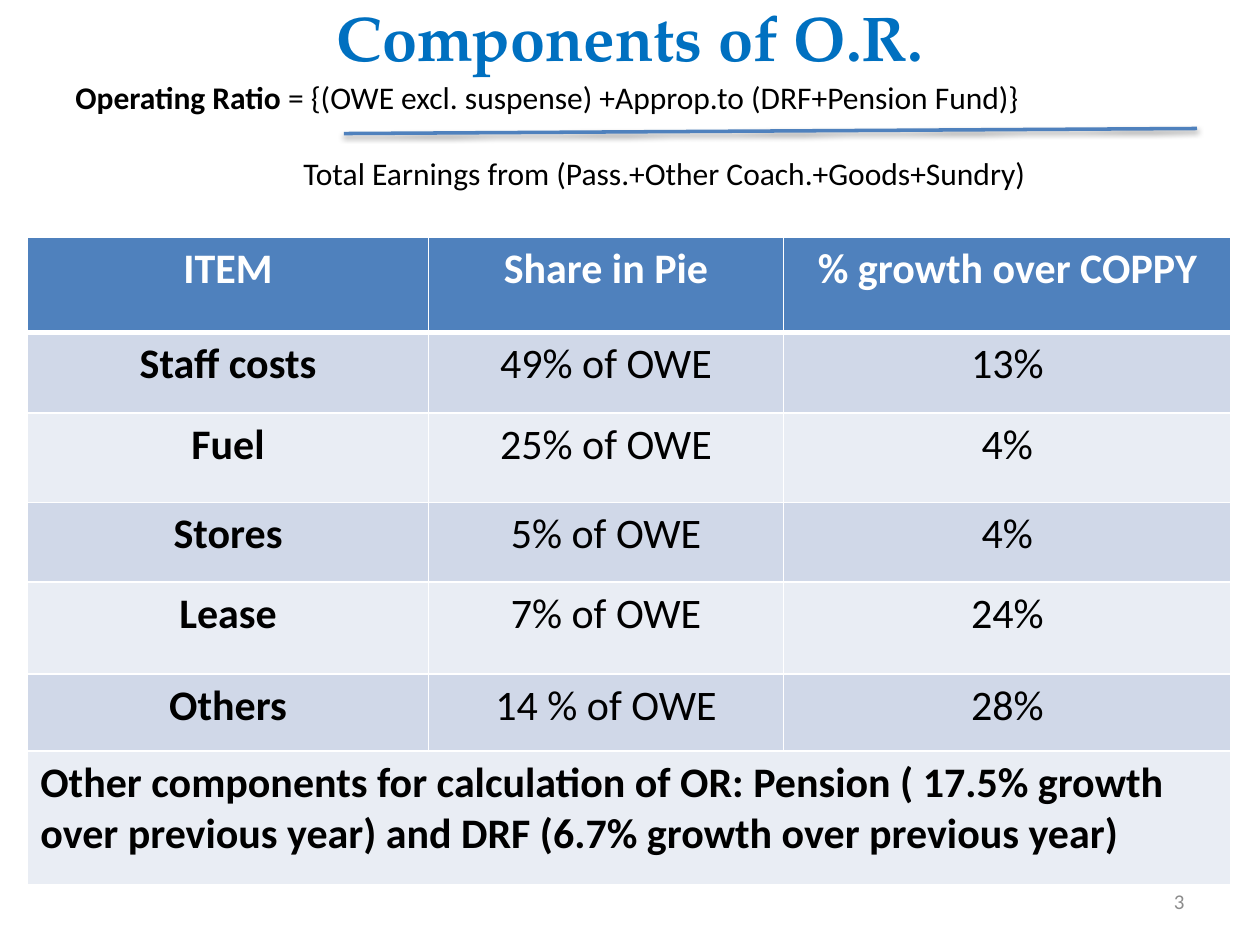
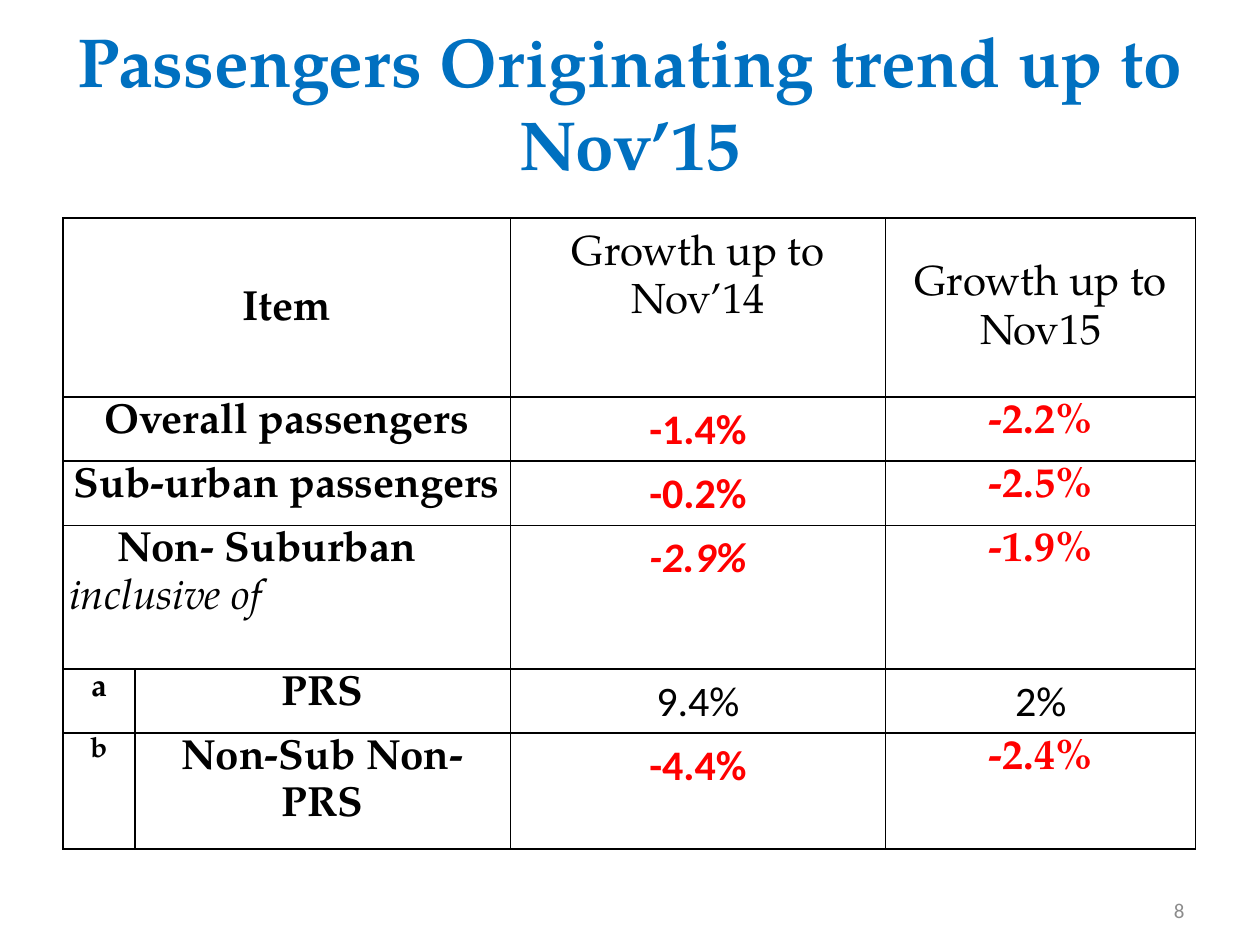
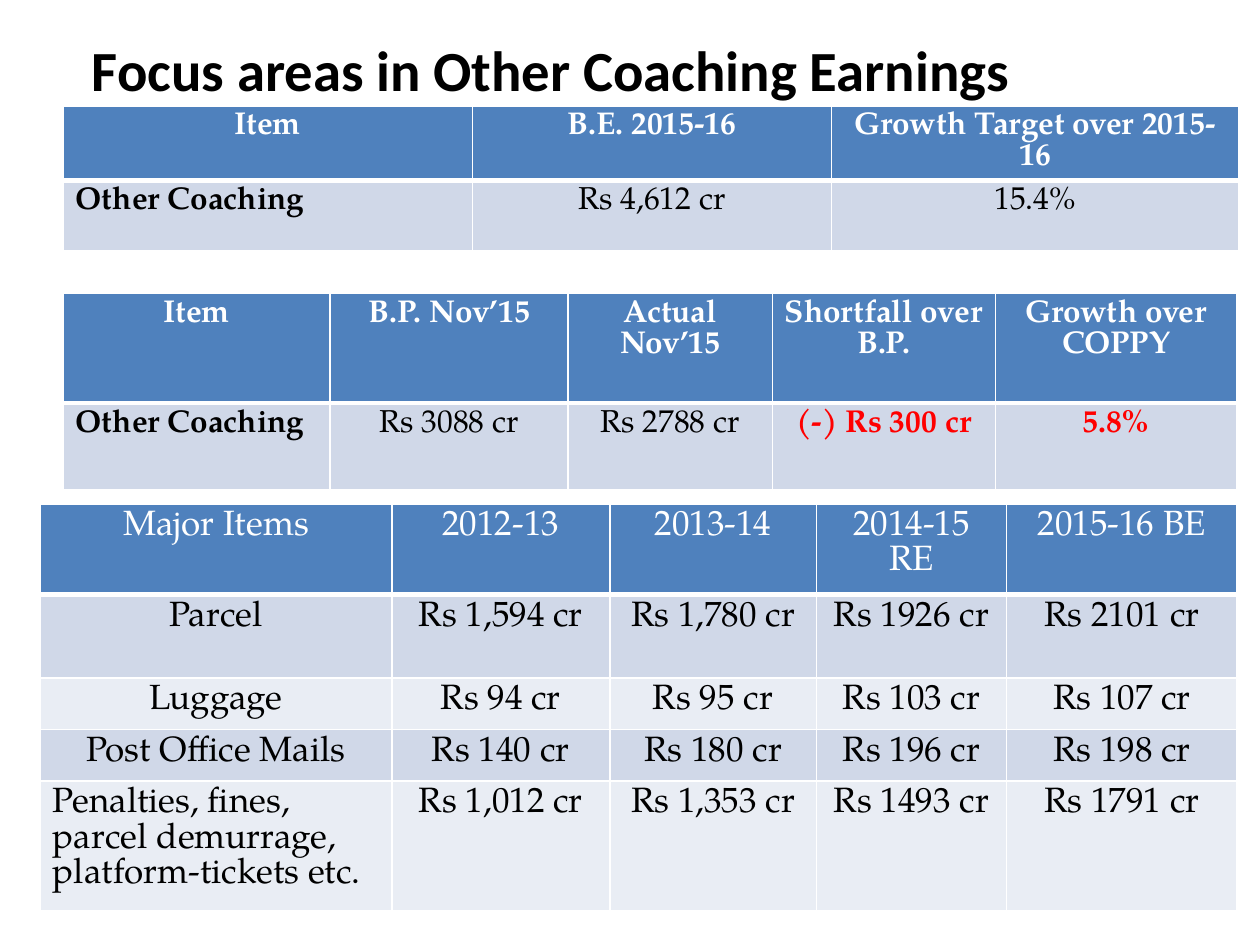
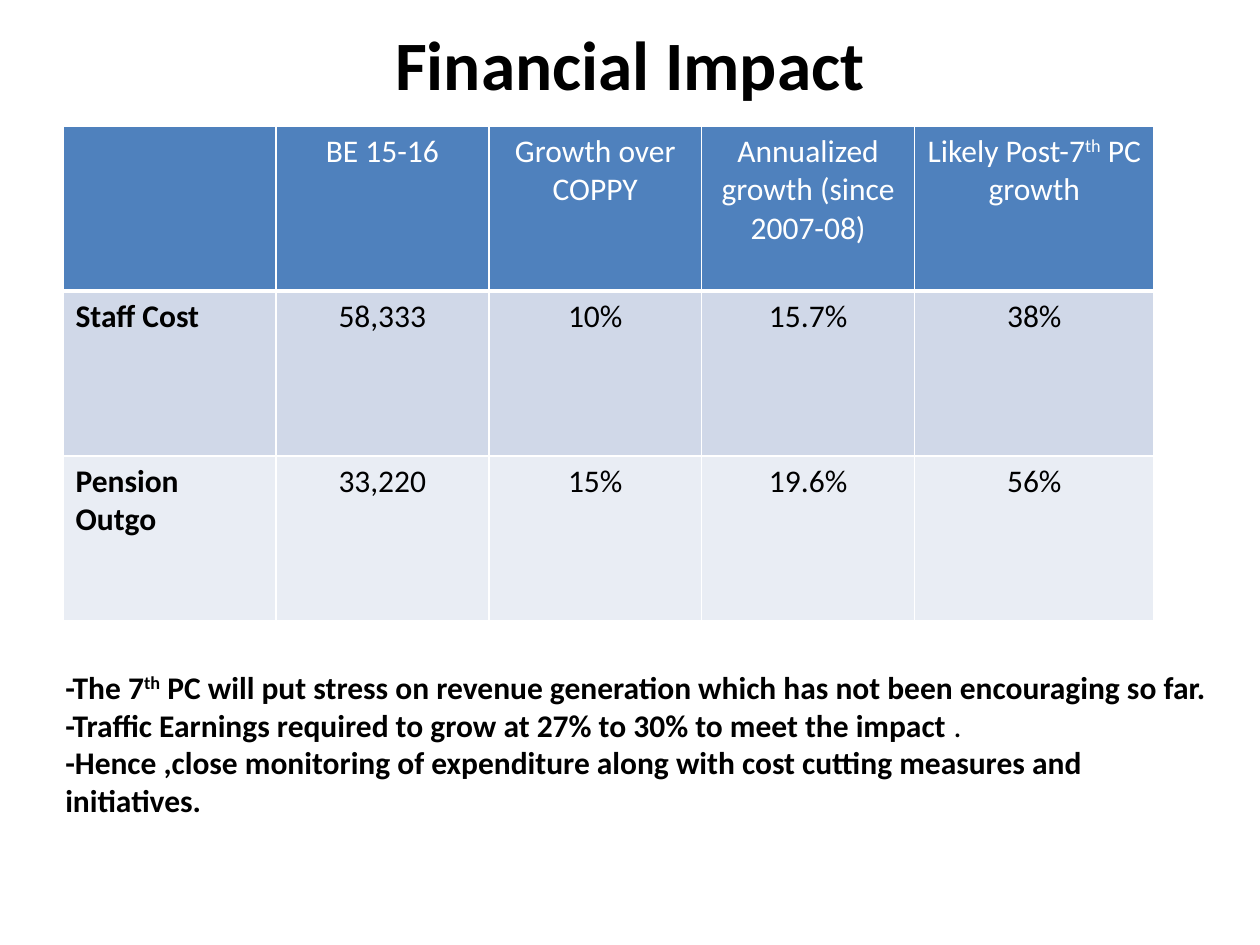
from dataclasses import dataclass, replace

from lxml import etree
from pptx import Presentation
from pptx.dml.color import RGBColor
from pptx.enum.shapes import MSO_CONNECTOR
from pptx.enum.text import MSO_ANCHOR, MSO_AUTO_SIZE, PP_ALIGN
from pptx.oxml.ns import qn
from pptx.util import Inches, Pt

LEFT, CENTER, RIGHT = PP_ALIGN.LEFT, PP_ALIGN.CENTER, PP_ALIGN.RIGHT
TOP, MIDDLE = MSO_ANCHOR.TOP, MSO_ANCHOR.MIDDLE
NO_FIT = MSO_AUTO_SIZE.NONE
STRAIGHT = MSO_CONNECTOR.STRAIGHT
TITLE_ONLY = 5


@dataclass(frozen=True)
class Theme:
    sans: str = "Calibri"
    serif: str = "TeX Gyre Pagella"
    ink: str = "000000"
    white: str = "FFFFFF"
    title_blue: str = "0070C0"
    header_blue: str = "4F81BD"
    bands: tuple = ("D0D8E8", "E9EDF4")
    alert: str = "FF0000"
    page_gray: str = "8C8C8C"
    title: float = 39.6
    title_compact: float = 36
    title_small: float = 32.4
    large: float = 24
    medium: float = 20
    body: float = 18
    marker: float = 16
    page: float = 12


THEME = Theme()


@dataclass(frozen=True)
class Style:
    size: float = THEME.body
    font: str = THEME.sans
    color: str = THEME.ink
    bold: bool = False
    italic: bool = False
    raised: bool = False
    align: PP_ALIGN = CENTER
    indent: float = 0
    before: float = 0
    spacing: float = 1.0


def write(frame, content, style):
    lines = [[(content, style)]] if isinstance(content, str) else content
    for index, spans in enumerate(lines):
        paragraph = frame.paragraphs[0] if index == 0 else frame.add_paragraph()
        lead = spans[0][1]
        paragraph.alignment = lead.align
        paragraph.line_spacing = lead.spacing
        paragraph.space_before = Pt(lead.before)
        if lead.indent:
            paragraph._p.get_or_add_pPr().set("marL", str(Inches(lead.indent)))
        for text, look in spans:
            run = paragraph.add_run()
            run.text = text
            run.font.size = Pt(look.size)
            run.font.name = look.font
            run.font.bold = look.bold
            run.font.italic = look.italic
            run.font.color.rgb = RGBColor.from_string(look.color)
            if look.raised:
                run._r.get_or_add_rPr().set("baseline", "30000")


def place(shape, left, top, width, height):
    shape.left, shape.top = Inches(left), Inches(top)
    shape.width, shape.height = Inches(width), Inches(height)


def add_titled_slide(deck, text, box, style):
    slide = deck.slides.add_slide(deck.slide_layouts[TITLE_ONLY])
    title = slide.shapes.title
    place(title, *box)
    frame = title.text_frame
    frame.word_wrap = True
    frame.auto_size = NO_FIT
    frame.vertical_anchor = MIDDLE
    write(frame, text, style)
    return slide


def add_text(slide, box, content, style, anchor=TOP):
    frame = slide.shapes.add_textbox(*map(Inches, box)).text_frame
    frame.word_wrap = True
    frame.vertical_anchor = anchor
    write(frame, content, style)


def add_page_number(slide, number, box):
    style = Style(THEME.page, color=THEME.page_gray, align=RIGHT)
    add_text(slide, box, number, style, MIDDLE)


def add_rule(slide, start, end):
    rule = slide.shapes.add_connector(STRAIGHT, *map(Inches, start + end))
    rule.line.color.rgb = RGBColor.from_string(THEME.header_blue)
    rule.line.width = Pt(2)
    effects = etree.SubElement(rule._element.spPr, qn("a:effectLst"))
    shadow = etree.SubElement(effects, qn("a:outerShdw"), blurRad=str(Pt(3.1)),
                              dist=str(Pt(1.6)), dir="5400000", rotWithShape="0")
    color = etree.SubElement(shadow, qn("a:srgbClr"), val=THEME.ink)
    etree.SubElement(color, qn("a:alpha"), val="38000")


def set_borders(cell, color, bottom=1):
    properties = cell._tc.get_or_add_tcPr()
    for side, width in (("L", 1), ("R", 1), ("T", 1), ("B", bottom)):
        line = etree.SubElement(properties, qn(f"a:ln{side}"), w=str(Pt(width)))
        fill = etree.SubElement(line, qn("a:solidFill"))
        etree.SubElement(fill, qn("a:srgbClr"), val=color)


def add_grid(slide, corner, widths, heights, rows, styles):
    header, label, value = styles
    table = slide.shapes.add_table(
        len(heights), len(widths), *map(Inches, corner),
        Inches(sum(widths)), Inches(sum(heights))).table
    for column, width in zip(table.columns, widths):
        column.width = Inches(width)
    for row, height in zip(table.rows, heights):
        row.height = Inches(height)
    for r, row in enumerate(rows):
        for c, content in enumerate(row):
            if content:
                style = header if r == 0 else label if c == 0 else value
                write(table.cell(r, c).text_frame, content, style)
    return table


def add_banded_table(slide, corner, widths, heights, rows, styles):
    table = add_grid(slide, corner, widths, heights, rows, styles)
    for r in range(len(heights)):
        fill = THEME.bands[(r - 1) % 2] if r else THEME.header_blue
        for c in range(len(widths)):
            cell = table.cell(r, c)
            set_borders(cell, THEME.white, bottom=1 if r else 3)
            cell.fill.solid()
            cell.fill.fore_color.rgb = RGBColor.from_string(fill)
    return table


def add_ruled_table(slide, corner, widths, heights, rows, styles):
    table = add_grid(slide, corner, widths, heights, rows, styles)
    table.first_row = table.horz_banding = False
    for cell in table.iter_cells():
        set_borders(cell, THEME.ink)
        cell.fill.background()
        cell.margin_left = cell.margin_right = Inches(0.05)
        cell.margin_top = cell.margin_bottom = 0
    return table


def build_operating_ratio(deck):
    slide = add_titled_slide(
        deck, "Components of O.R.", (0.5, 0, 9, 0.57),
        Style(THEME.title_compact, THEME.serif, THEME.title_blue, bold=True))
    value = Style(THEME.large)
    label = replace(value, bold=True)
    note = replace(label, align=LEFT)
    rows = [
        ["ITEM", "Share in Pie", "% growth over COPPY"],
        ["Staff costs", "49% of OWE", "13%"],
        ["Fuel", "25% of OWE", "4%"],
        ["Stores", "5% of OWE", "4%"],
        ["Lease", "7% of OWE", "24%"],
        ["Others", "14 % of OWE", "28%"],
        [[[("Other components for calculation of OR: Pension ( 17.5% growth over "
            "previous year) and DRF (6.7% growth over previous year)", note)]]],
    ]
    table = add_banded_table(
        slide, (0.22, 1.88), (3.18, 2.82, 3.55),
        (0.76, 0.64, 0.71, 0.63, 0.73, 0.61, 1.06), rows,
        (replace(label, color=THEME.white), label, value))
    table.cell(6, 0).merge(table.cell(6, 2))
    add_page_number(slide, "3", (7.17, 6.95, 2.33, 0.4))
    formula = Style(align=LEFT)
    add_text(slide, (0.5, 0.57, 9, 1.31), [
        [("Operating Ratio ", replace(formula, bold=True)),
         ("= {(OWE excl. suspense) +Approp.to (DRF+Pension Fund)}", formula)],
        [("Total Earnings from (Pass.+Other Coach.+Goods+Sundry)",
          replace(formula, indent=1.81, before=22))],
    ], formula)
    add_rule(slide, (2.73, 1.06), (9.5, 1.02))


def build_passenger_trend(deck):
    slide = add_titled_slide(
        deck, "Passengers Originating trend up to Nov’15", (0.5, 0.26, 9, 1.09),
        Style(THEME.title, THEME.serif, THEME.title_blue, bold=True))
    add_page_number(slide, "8", (9.12, 6.95, 0.38, 0.55))
    header = Style(THEME.large, THEME.serif, spacing=1.15)
    label = replace(header, bold=True)
    fall = replace(label, color=THEME.alert)
    rise = replace(header, font=THEME.sans)

    def earlier(text, italic=False):
        return [[(text, replace(fall, font=THEME.sans, italic=italic))]]

    def marker(text, size):
        return [[(text, replace(label, size=size))]]

    non_suburban = [
        [("Non- Suburban", replace(label, align=LEFT, indent=0.38))],
        [("inclusive of", replace(header, italic=True, align=LEFT))],
    ]
    rows = [
        [[[("Item", label)]], "", "Growth up to Nov’14", "Growth up to Nov15"],
        ["Overall passengers", "", earlier("-1.4%"), "-2.2%"],
        ["Sub-urban passengers", "", earlier("-0.2%"), "-2.5%"],
        [non_suburban, "", earlier("-2.9%", italic=True), "-1.9%"],
        [marker("a", THEME.body), [[("PRS", label)]],
         [[("9.4%", rise)]], [[("2%", rise)]]],
        [marker("b", THEME.marker), [[("Non-Sub Non-PRS", label)]],
         earlier("-4.4%"), "-2.4%"],
    ]
    table = add_ruled_table(
        slide, (0.5, 1.73), (0.57, 2.98, 2.98, 2.46),
        (1.42, 0.51, 0.51, 1.14, 0.51, 0.75), rows, (header, label, fall))
    for r in range(4):
        table.cell(r, 0).merge(table.cell(r, 1))
    for c in range(4):
        table.cell(0, c).vertical_anchor = MIDDLE
    table.cell(0, 2).margin_bottom = Inches(0.48)


def build_other_coaching(deck):
    slide = add_titled_slide(
        deck, "Focus areas in Other Coaching Earnings", (0.5, 0.2, 9.32, 0.69),
        Style(THEME.title_small, bold=True, align=LEFT, indent=0.13))
    value = Style(font=THEME.serif)
    label = replace(value, bold=True, align=LEFT)
    header = replace(value, bold=True, color=THEME.white)
    alert = replace(value, bold=True, color=THEME.alert)
    summary = (header, label, value)
    add_banded_table(slide, (0.5, 0.84), (3.25, 2.85, 3.23), (0.58, 0.56), [
        ["Item", "B.E. 2015-16", "Growth Target over 2015-16"],
        ["Other Coaching", "Rs 4,612 cr", "15.4%"],
    ], summary)
    add_banded_table(
        slide, (0.5, 2.33), (2.12, 1.89, 1.62, 1.77, 1.92), (0.87, 0.69), [
            ["Item", "B.P. Nov’15", "Actual Nov’15", "Shortfall over B.P.",
             "Growth over COPPY"],
            ["Other Coaching", "Rs 3088 cr", "Rs 2788 cr",
             [[("(-) Rs 300 cr", alert)]], [[("5.8%", alert)]]],
        ], summary)
    item = replace(value, size=THEME.medium)
    penalties = "Penalties, fines, parcel demurrage, platform-tickets etc."
    add_banded_table(
        slide, (0.32, 4), (2.79, 1.73, 1.64, 1.51, 1.83),
        (0.72, 0.66, 0.41, 0.41, 1.03), [
            ["Major Items", "2012-13", "2013-14", "2014-15 RE", "2015-16 BE"],
            ["Parcel", "Rs 1,594 cr", "Rs 1,780 cr", "Rs 1926 cr", "Rs 2101 cr"],
            ["Luggage", "Rs 94 cr", "Rs 95 cr", "Rs 103 cr", "Rs 107 cr"],
            ["Post Office Mails", "Rs 140 cr", "Rs 180 cr", "Rs 196 cr", "Rs 198 cr"],
            [[[(penalties, replace(item, align=LEFT))]],
             "Rs 1,012 cr", "Rs 1,353 cr", "Rs 1493 cr", "Rs 1791 cr"],
        ], (replace(item, color=THEME.white), item, item))


def build_financial_impact(deck):
    slide = add_titled_slide(deck, "Financial Impact", (0.5, 0, 9, 1),
                             Style(THEME.title, bold=True))
    value = Style()
    header = replace(value, color=THEME.white)
    label = replace(value, bold=True, align=LEFT)
    pay_commission = [[("Likely Post-7", header), ("th", replace(header, raised=True)),
                       (" PC growth", header)]]
    add_banded_table(slide, (0.5, 1), (1.69,) * 4 + (1.9,), (1.31,) * 3, [
        ["", "BE 15-16", "Growth over COPPY", "Annualized growth (since 2007-08)",
         pay_commission],
        ["Staff Cost", "58,333", "10%", "15.7%", "38%"],
        ["Pension Outgo", "33,220", "15%", "19.6%", "56%"],
    ], (header, label, value))
    add_text(slide, (0.42, 5.25, 9.33, 1.31), [
        [("-The 7", label), ("th", replace(label, raised=True)),
         (" PC will put stress on revenue generation which has not been "
          "encouraging so far.", label)],
        [("-Traffic Earnings required to grow at 27% to 30% to meet the impact ", label),
         (".", replace(label, bold=False))],
        [("-Hence ,close monitoring of expenditure along with cost cutting "
          "measures and initiatives.", label)],
    ], label)


def main():
    deck = Presentation()
    deck.slide_width, deck.slide_height = Inches(10), Inches(7.5)
    build_operating_ratio(deck)
    build_passenger_trend(deck)
    build_other_coaching(deck)
    build_financial_impact(deck)
    deck.save("out.pptx")


if __name__ == "__main__":
    main()
